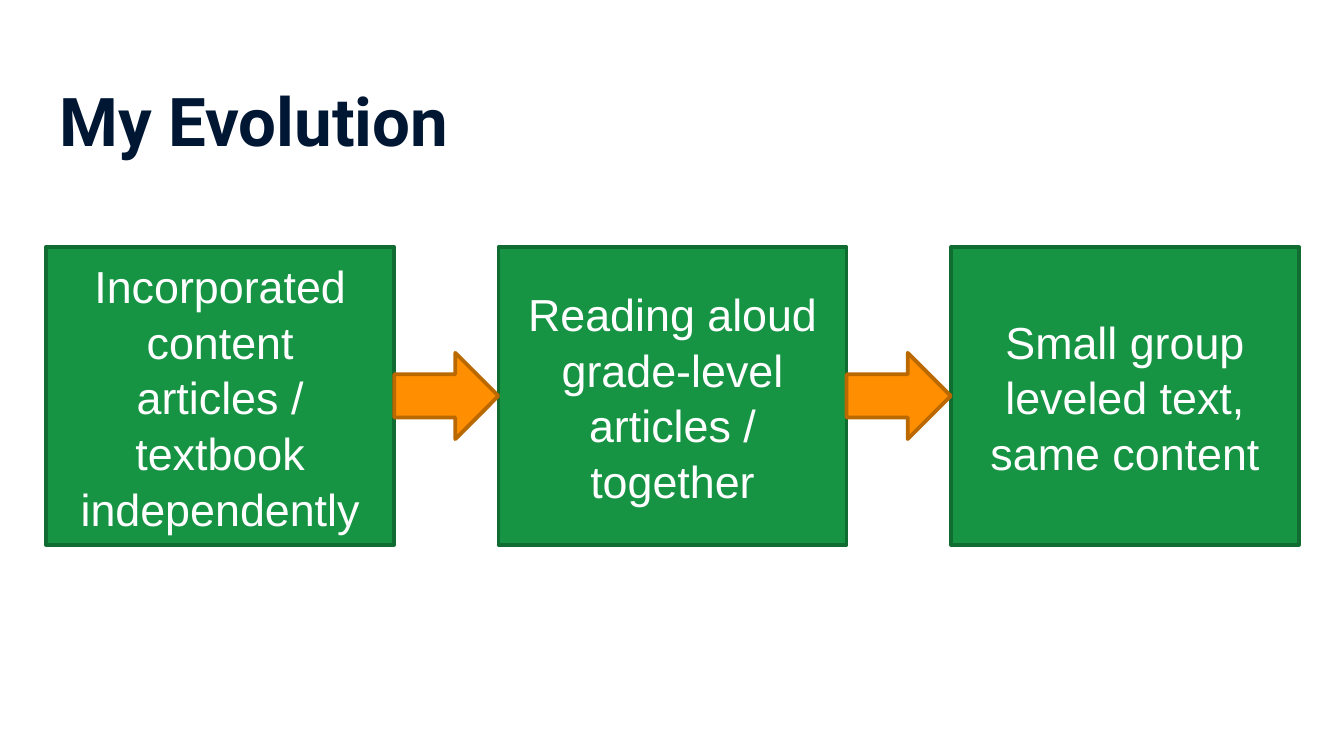
from pptx import Presentation
from pptx.dml.color import RGBColor
from pptx.enum.shapes import MSO_SHAPE
from pptx.enum.text import MSO_ANCHOR, PP_ALIGN
from pptx.util import Cm, Pt

HUES = {
    "navy": "001733",
    "green": "169444",
    "pine": "106C31",
    "orange": "FF8F01",
    "rust": "BA6800",
    "white": "FFFFFF",
}


class Deck:
    def __init__(self, slide):
        self.slide = slide

    def hue(self, name):
        return RGBColor.from_string(HUES[name])

    def style(self, para, font, size, hue, bold=False):
        for run in para.runs:
            run.font.name = font
            run.font.size = Pt(size)
            run.font.bold = bold
            run.font.color.rgb = self.hue(hue)

    def title(self, text, x, y, w, h):
        box = self.slide.shapes.add_textbox(Cm(x), Cm(y), Cm(w), Cm(h))
        frame = box.text_frame
        frame.word_wrap = True
        frame.margin_top = frame.margin_bottom = Cm(0.25)
        frame.text = text
        self.style(frame.paragraphs[0], "Roboto", 36, "navy", True)

    def shape(self, kind, x, y, w, h, fill, line):
        shape = self.slide.shapes.add_shape(kind, Cm(x), Cm(y), Cm(w), Cm(h))
        shape.shadow.inherit = False
        shape.fill.solid()
        shape.fill.fore_color.rgb = self.hue(fill)
        shape.line.color.rgb = self.hue(line)
        shape.line.width = Pt(2)
        return shape

    def step(self, text, x, y, w, h):
        box = self.shape(MSO_SHAPE.RECTANGLE, x, y, w, h, "green", "pine")
        frame = box.text_frame
        frame.word_wrap = True
        frame.vertical_anchor = MSO_ANCHOR.MIDDLE
        frame.text = text
        para = frame.paragraphs[0]
        para.alignment = PP_ALIGN.CENTER
        para.line_spacing = 1.04
        self.style(para, "Arial", 24, "white")

    def arrow(self, x, y, w, h):
        self.shape(MSO_SHAPE.RIGHT_ARROW, x, y, w, h, "orange", "rust")


def main():
    show = Presentation()
    show.slide_width, show.slide_height = Cm(25.4), Cm(14.28)
    deck = Deck(show.slides.add_slide(show.slide_layouts[6]))

    # Heading
    left = 0.87
    deck.title("My Evolution", left, 1.24, 23.67, 1.6)

    # Steps in a row
    steps = [
        "Incorporated content articles / textbook independently",
        "Reading aloud grade-level articles / together",
        "Small group leveled text, same content",
    ]
    top, wide, high, gap = 4.67, 6.58, 5.62, 1.97
    spots = [left + i * (wide + gap) for i in range(len(steps))]
    for text, x in zip(steps, spots):
        deck.step(text, x, top, wide, high)

    # Arrows fill the gaps, centred on the row
    tall = 1.63
    for x in spots[:-1]:
        deck.arrow(x + wide, top + (high - tall) / 2, gap, tall)

    show.save("out.pptx")


if __name__ == "__main__":
    main()
